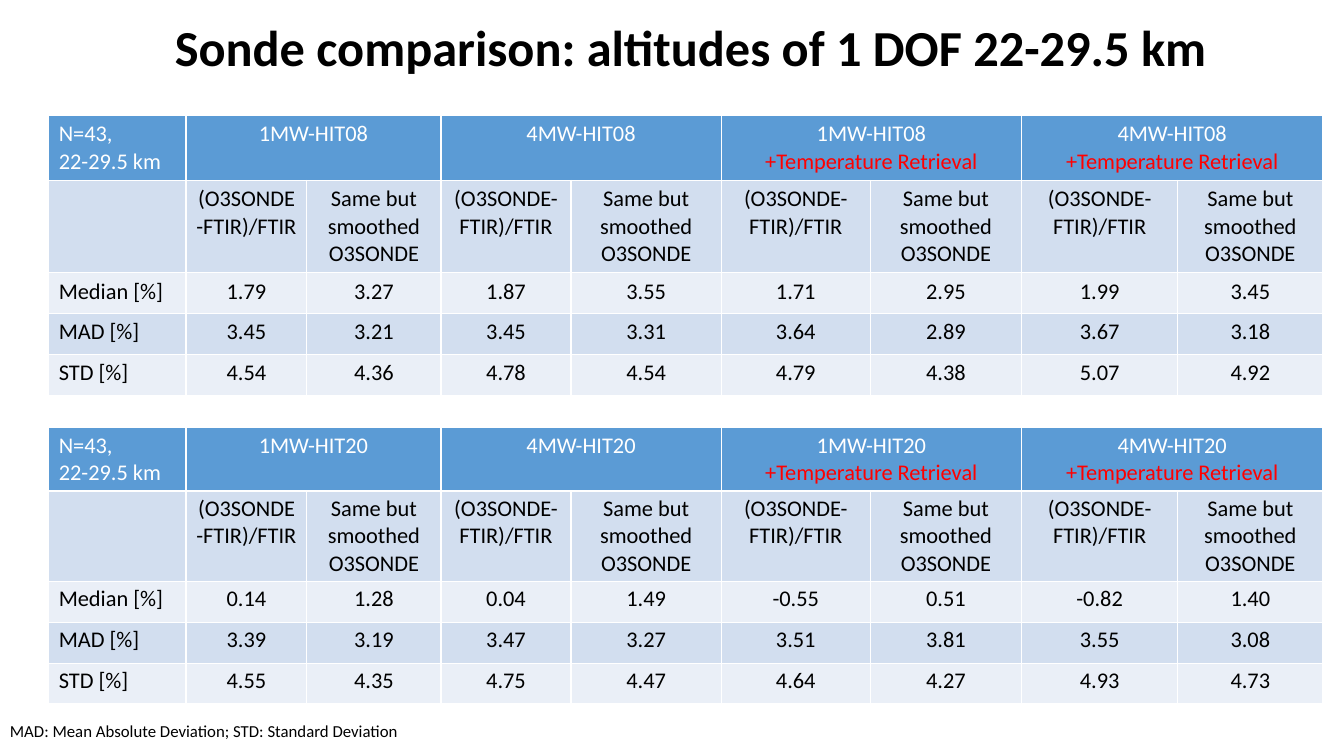
from pptx import Presentation
from pptx.dml.color import RGBColor
from pptx.enum.text import MSO_ANCHOR, MSO_AUTO_SIZE, PP_ALIGN
from pptx.oxml import parse_xml
from pptx.oxml.ns import nsdecls
from pptx.util import Pt

COLORS = {
    "white": "FFFFFF", "black": "000000", "red": "FF0000",
    "header": "5B9BD5", "dark_band": "D2DEEF", "light_band": "EAEFF7",
}
COL_WIDTHS = [98, 86.4, 95.8, 92.9, 107.3, 106.5, 108, 111.6, 103.7]
METHODS = ["1MW", "4MW"]
RETRIEVALS = ["", "+Temperature Retrieval"]
SUBHEADS = ["(O3SONDE-FTIR)/FTIR", "Same but smoothed O3SONDE"]
TABLES = [
    {"database": "HIT08", "top": 82.5, "margin": 3.6, "heights": [46.3, 65.8, 29.2, 29.2, 29.2],
     "stats": [
         ["Median [%]", "1.79", "3.27", "1.87", "3.55", "1.71", "2.95", "1.99", "3.45"],
         ["MAD [%]", "3.45", "3.21", "3.45", "3.31", "3.64", "2.89", "3.67", "3.18"],
         ["STD [%]", "4.54", "4.36", "4.78", "4.54", "4.79", "4.38", "5.07", "4.92"]]},
    {"database": "HIT20", "top": 305.5, "margin": 2.9, "heights": [45.2, 64.6, 29.2, 29.2, 29.2],
     "stats": [
         ["Median [%]", "0.14", "1.28", "0.04", "1.49", "-0.55", "0.51", "-0.82", "1.40"],
         ["MAD [%]", "3.39", "3.19", "3.47", "3.27", "3.51", "3.81", "3.55", "3.08"],
         ["STD [%]", "4.55", "4.35", "4.75", "4.47", "4.64", "4.27", "4.93", "4.73"]]},
]


def add_run(p, text, color="black", size=16, bold=False):
    r = p.add_run()
    r.text = text
    font = {"name": "Calibri", "size": Pt(size), "bold": bold}
    for key, value in font.items():
        setattr(r.font, key, value)
    r.font.color.rgb = RGBColor.from_string(COLORS[color])


def style_cell(cell, fill, margin):
    tc_pr = cell._tc.get_or_add_tcPr()
    for side in "LRTB":
        tc_pr.append(parse_xml(
            f'<a:ln{side} {nsdecls("a")} w="{Pt(1)}"><a:solidFill>'
            f'<a:srgbClr val="{COLORS["white"]}"/></a:solidFill></a:ln{side}>'))
    cell.fill.solid()
    cell.fill.fore_color.rgb = RGBColor.from_string(COLORS[fill])
    cell.margin_top = cell.margin_bottom = Pt(margin)


prs = Presentation()
prs.slide_width, prs.slide_height = Pt(960), Pt(540)
s = prs.slides.add_slide(prs.slide_layouts[5])

title = s.shapes.title
box = {"left": Pt(116), "top": Pt(8), "width": Pt(761.8), "height": Pt(51)}
for key, value in box.items():
    setattr(title, key, value)
tf = title.text_frame
frame = {"word_wrap": True, "auto_size": MSO_AUTO_SIZE.NONE, "vertical_anchor": MSO_ANCHOR.TOP}
for key, value in frame.items():
    setattr(tf, key, value)
p = tf.paragraphs[0]
p.alignment = PP_ALIGN.RIGHT
add_run(p, "Sonde comparison: altitudes of 1 DOF 22-29.5 km ", size=36, bold=True)

for data in TABLES:
    heights = data["heights"]
    frame = s.shapes.add_table(5, 9, Pt(34.8), Pt(data["top"]), Pt(sum(COL_WIDTHS)), Pt(sum(heights)))
    table = frame.table
    table.first_row = table.horz_banding = False
    for column, width in zip(table.columns, COL_WIDTHS):
        column.width = Pt(width)
    for row, height in zip(table.rows, heights):
        row.height = Pt(height)
    fills = ["header", "dark_band", "light_band", "dark_band", "light_band"]
    for row, fill in zip(table.rows, fills):
        for cell in row.cells:
            style_cell(cell, fill, data["margin"])

    tf = table.cell(0, 0).text_frame
    add_run(tf.paragraphs[0], "N=43,", "white")
    add_run(tf.add_paragraph(), "22-29.5 km", "white")

    groups = [(method, retrieval) for retrieval in RETRIEVALS for method in METHODS]
    for i, (method, retrieval) in enumerate(groups):
        cell = table.cell(0, 1 + 2 * i)
        cell.merge(table.cell(0, 2 + 2 * i))
        p = cell.text_frame.paragraphs[0]
        p.alignment = PP_ALIGN.CENTER
        add_run(p, f"{method}-{data['database']}", "white")
        if retrieval:
            p.add_line_break()
            add_run(p, retrieval, "red")

    body = [[""] + SUBHEADS * len(groups)] + data["stats"]
    for r, values in enumerate(body, 1):
        for c, value in enumerate(values):
            p = table.cell(r, c).text_frame.paragraphs[0]
            p.alignment = PP_ALIGN.CENTER if c else PP_ALIGN.LEFT
            if value:
                add_run(p, value)

note = s.shapes.add_textbox(0, Pt(511.2), Pt(294.5), Pt(21.6))
note.text_frame.word_wrap = False
add_run(note.text_frame.paragraphs[0], "MAD: Mean Absolute Deviation; STD: Standard Deviation", size=12)

prs.save("out.pptx")
